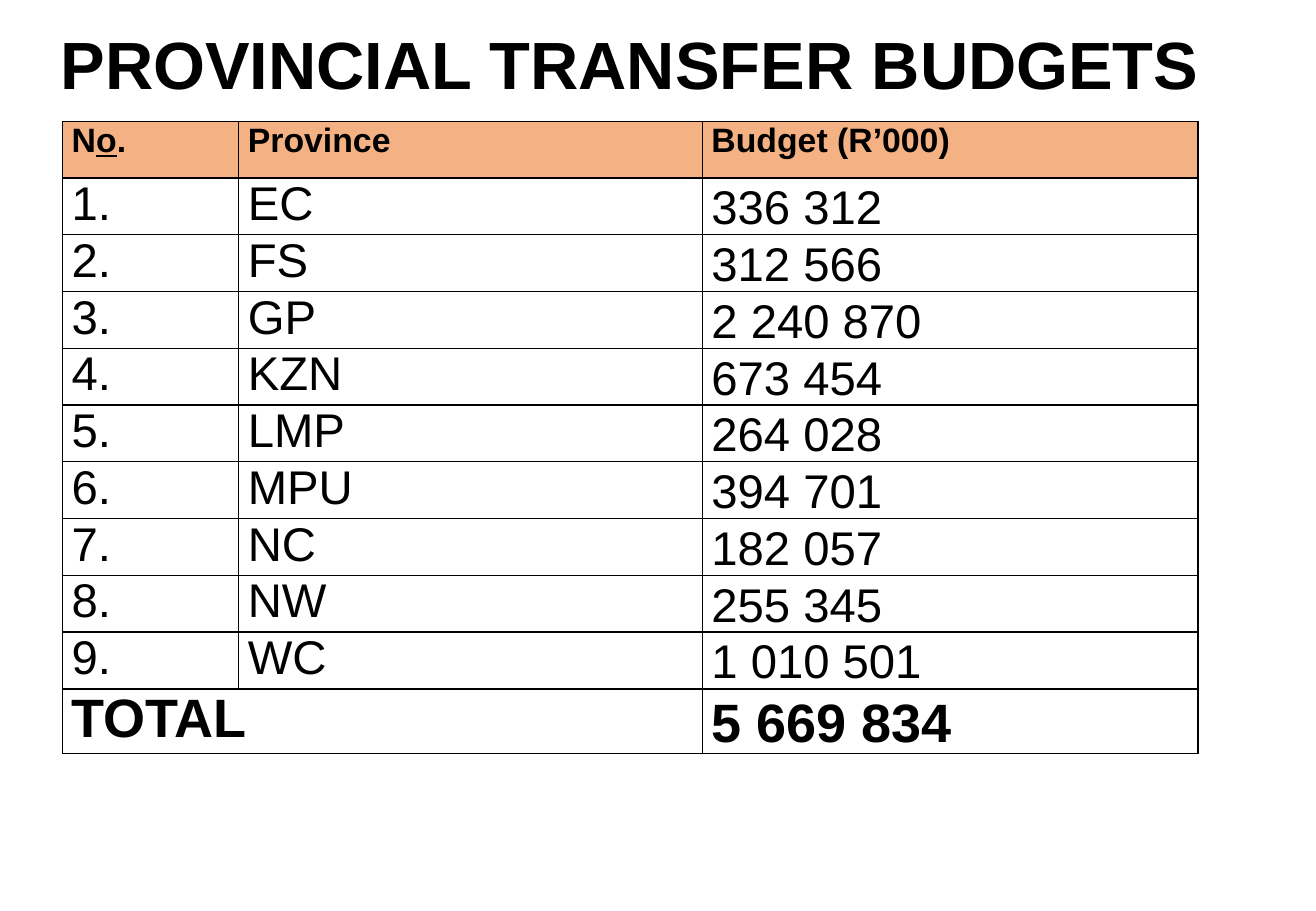
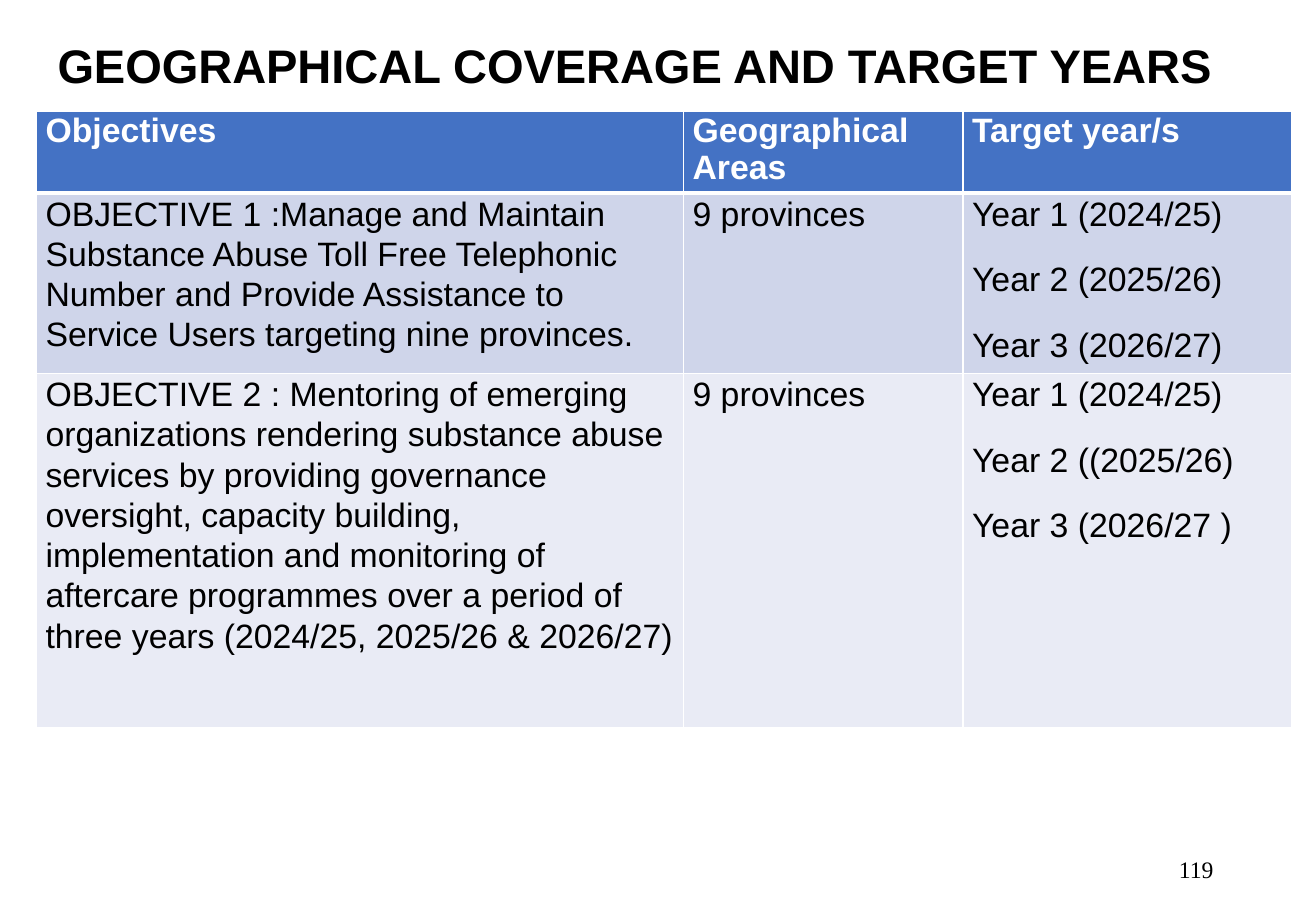
from dataclasses import dataclass

from lxml.etree import SubElement
from pptx import Presentation
from pptx.dml.color import RGBColor
from pptx.enum.text import MSO_ANCHOR, PP_ALIGN
from pptx.oxml.ns import qn
from pptx.slide import Slide
from pptx.table import Table, _Cell
from pptx.util import Emu, Pt

PX = 914400 // 200
COLORS = {
    "black": "000000",
    "white": "FFFFFF",
    "orange": "F4B183",
    "blue": "4472C4",
    "mist": "CFD5EA",
    "pale": "E9EBF5",
}
FONT = "Arial"
SIDES = ("L", "R", "T", "B")


@dataclass(frozen=True)
class Box:
    left: int
    top: int
    width: int
    height: int

    def emu(self) -> list[Emu]:
        return [px(n) for n in (self.left, self.top, self.width, self.height)]


@dataclass(frozen=True)
class Style:
    size: float
    color: str = "black"
    bold: bool = False
    face: str = FONT
    align: PP_ALIGN = PP_ALIGN.LEFT
    lines: float = 1.0


@dataclass(frozen=True)
class Row:
    texts: tuple[str, ...]
    height: int
    style: Style
    fill: str
    rule: int = 1


def px(count: int) -> Emu:
    return Emu(count * PX)


def rgb(name: str) -> RGBColor:
    return RGBColor.from_string(COLORS[name])


def write(frame, text: str, style: Style, gap: int = 0) -> None:
    frame.word_wrap = True
    for spot, line in enumerate(text.split("\n")):
        para = frame.add_paragraph() if spot else frame.paragraphs[0]
        for part, piece in enumerate(line.split("_")):
            run = para.add_run()
            run.text = piece
            if part % 2:
                run.font.underline = True
        para.alignment = style.align
        para.line_spacing = style.lines
        para.space_before = Pt(gap if spot else 0)
        para.space_after = Pt(0)
        font = para.font
        font.name, font.size, font.bold = style.face, Pt(style.size), style.bold
        font.color.rgb = rgb(style.color)


def label(slide: Slide, box: Box, text: str, style: Style) -> None:
    frame = slide.shapes.add_textbox(*box.emu()).text_frame
    frame.vertical_anchor = MSO_ANCHOR.MIDDLE
    write(frame, text, style)


def title(slide: Slide, box: Box, text: str, size: float) -> None:
    label(slide, box, text, Style(size, bold=True, lines=0.9))


def edge(cell: _Cell, side: str, color: str, width: int) -> None:
    line = SubElement(cell._tc.get_or_add_tcPr(), qn(f"a:ln{side}"), w=str(Pt(width)))
    fill = SubElement(line, qn("a:solidFill"))
    SubElement(fill, qn("a:srgbClr"), val=COLORS[color])


def grid(slide: Slide, left: int, top: int, cols: list[int], rows: list[Row],
         color: str) -> Table:
    box = Box(left, top, sum(cols), sum(row.height for row in rows))
    table = slide.shapes.add_table(len(rows), len(cols), *box.emu()).table
    table.first_row = table.horz_banding = False
    for col, width in zip(table.columns, cols):
        col.width = px(width)
    above = 1
    for spot, row in enumerate(rows):
        table.rows[spot].height = px(row.height)
        for cell, text in zip(table.rows[spot].cells, row.texts):
            for side, width in zip(SIDES, (1, 1, above, row.rule)):
                edge(cell, side, color, width)
            cell.fill.solid()
            cell.fill.fore_color.rgb = rgb(row.fill)
            cell.margin_left = cell.margin_right = px(15)
            cell.margin_top = cell.margin_bottom = 0
            if text:
                write(cell.text_frame, text, row.style, gap=15)
        above = row.rule
    return table


def budgets(slide: Slide) -> None:
    title(slide, Box(80, 44, 1938, 134), "PROVINCIAL TRANSFER BUDGETS", 39.6)
    head = Style(20, bold=True)
    body = Style(28)
    total = Style(32, bold=True)
    sums = {
        "EC": "336 312",
        "FS": "312 566",
        "GP": "2 240 870",
        "KZN": "673 454",
        "LMP": "264 028",
        "MPU": "394 701",
        "NC": "182 057",
        "NW": "255 345",
        "WC": "1 010 501",
    }
    rows = [Row(("N_o_.", "Province", "Budget (R’000)"), 93, head, "orange")]
    for spot, (name, budget) in enumerate(sums.items(), 1):
        rows.append(Row((f"{spot}.", name, budget), 93, body, "white"))
    rows.append(Row(("TOTAL", "", "5 669 834"), 106, total, "white"))
    table = grid(slide, 103, 200, [290, 763, 816], rows, "black")
    last = len(rows) - 1
    table.cell(last, 0).merge(table.cell(last, 1))
    for spot in range(1, len(rows)):
        table.cell(spot, 2).vertical_anchor = MSO_ANCHOR.BOTTOM


def targets(slide: Slide) -> None:
    title(slide, Box(75, 56, 1991, 114), "GEOGRAPHICAL COVERAGE AND TARGET YEARS", 27.9)
    page = Style(14, face="Times New Roman", align=PP_ALIGN.RIGHT)
    label(slide, Box(1529, 1391, 488, 80), "119", page)
    head = Style(20, "white", True)
    body = Style(20, lines=1.07)
    rows = [
        Row(("Objectives", "Geographical Areas", "Target year/s"), 130, head, "blue", 3),
        Row((
            "OBJECTIVE 1 :Manage and Maintain Substance Abuse Toll Free Telephonic "
            "Number and Provide Assistance to Service Users targeting nine provinces.",
            "9 provinces",
            "Year 1 (2024/25)\nYear 2 (2025/26)\nYear 3 (2026/27)",
        ), 296, body, "mist"),
        Row((
            "OBJECTIVE 2 : Mentoring of emerging organizations rendering substance "
            "abuse services by providing governance oversight, capacity building, "
            "implementation and monitoring of aftercare programmes over a period of "
            "three years (2024/25, 2025/26 & 2026/27)",
            "9 provinces",
            "Year 1 (2024/25)\nYear 2 ((2025/26)\nYear 3 (2026/27 )",
        ), 584, body, "pale"),
    ]
    grid(slide, 60, 184, [1065, 460, 541], rows, "white")


def main() -> None:
    deck = Presentation()
    deck.slide_width, deck.slide_height = px(2166), px(1500)
    for draw in (budgets, targets):
        draw(deck.slides.add_slide(deck.slide_layouts[6]))
    deck.save("out.pptx")


if __name__ == "__main__":
    main()
